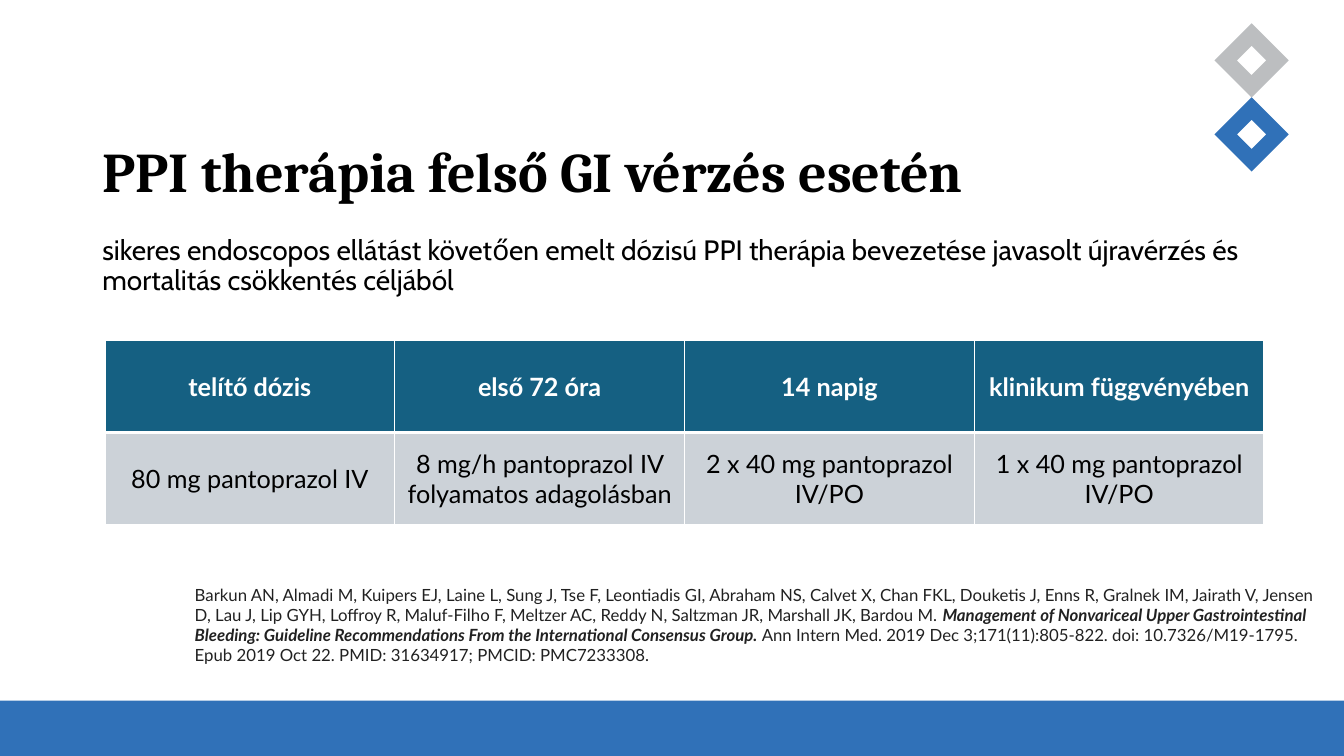
from lxml.etree import SubElement
from pptx import Presentation
from pptx.dml.color import RGBColor
from pptx.enum.shapes import MSO_SHAPE
from pptx.enum.text import MSO_ANCHOR as Anchor, PP_ALIGN as Align
from pptx.oxml.ns import qn
from pptx.util import Inches, Pt

BLUE = RGBColor(0x30, 0x71, 0xB8)
GREY = RGBColor(0xBC, 0xBE, 0xC0)
TEAL = RGBColor(0x15, 0x60, 0x82)
PALE = RGBColor(0xCC, 0xD2, 0xD8)
INK = RGBColor(0x21, 0x21, 0x21)
BLACK = RGBColor(0, 0, 0)
WHITE = RGBColor(255, 255, 255)

COLUMNS, ROWS = 160, 90
MARGIN, CONTENT_WIDTH = 11, 138

STYLES = {
    "title": {"name": "Cambria", "size": Pt(40), "bold": True, "color": BLACK},
    "body": {"name": "Cabin", "size": Pt(20), "color": BLACK},
    "citation": {"name": "Lato", "size": Pt(12), "color": INK},
    "article": {"name": "Lato", "size": Pt(12), "color": INK, "bold": True, "italic": True},
    "header": {"name": "Lato", "size": Pt(18), "bold": True, "color": WHITE},
    "dose": {"name": "Lato", "size": Pt(18), "bold": False, "color": BLACK},
}

DOSING = [
    ("telítő dózis", "80 mg pantoprazol IV"),
    ("első 72 óra", "8 mg/h pantoprazol IV folyamatos adagolásban"),
    ("14 napig", "2 x 40 mg pantoprazol IV/PO"),
    ("klinikum függvényében", "1 x 40 mg pantoprazol IV/PO"),
]

CITATION = [
    ("Barkun AN, Almadi M, Kuipers EJ, Laine L, Sung J, Tse F, Leontiadis GI, Abraham NS, "
     "Calvet X, Chan FKL, Douketis J, Enns R, Gralnek IM, Jairath V, Jensen D, Lau J, "
     "Lip GYH, Loffroy R, Maluf-Filho F, Meltzer AC, Reddy N, Saltzman JR, Marshall JK, "
     "Bardou M. ", "citation"),
    ("Management of Nonvariceal Upper Gastrointestinal Bleeding: Guideline Recommendations "
     "From the International Consensus Group. ", "article"),
    ("Ann Intern Med. 2019 Dec 3;171(11):805-822. doi: 10.7326/M19-1795. "
     "Epub 2019 Oct 22. PMID: 31634917; PMCID: PMC7233308.", "citation"),
]


class SlideBuilder:
    """Places styled elements on one slide by grid columns and rows."""

    def __init__(self, deck):
        self.slide = deck.slides.add_slide(deck.slide_layouts[6])
        self.shapes = self.slide.shapes
        self.column = deck.slide_width / COLUMNS
        self.row = deck.slide_height / ROWS

    def point(self, x, y):
        return round(x * self.column), round(y * self.row)

    def area(self, left, top, width, height):
        return *self.point(left, top), *self.point(width, height)

    def paint(self, shape, color):
        shape.shadow.inherit = False
        shape.fill.solid()
        shape.fill.fore_color.rgb = color
        shape.line.fill.background()

    def band(self, place, color):
        self.paint(self.shapes.add_shape(MSO_SHAPE.RECTANGLE, *self.area(*place)), color)

    def diamond_ring(self, x, y, color, outer=4.42, inner=1.75):
        hole = [(x - inner, y), (x, y - inner), (x + inner, y), (x, y + inner)]
        rim = [(x, y - outer), (x - outer, y), (x, y + outer), (x + outer, y)]
        hole, rim = ([self.point(*corner) for corner in ring] for ring in (hole, rim))
        outline = self.shapes.build_freeform(*hole[0])
        outline.add_line_segments(hole[1:], close=True)
        outline.move_to(*rim[0])
        outline.add_line_segments(rim[1:], close=True)
        self.paint(outline.convert_to_shape(), color)

    def add_passage(self, paragraph, content, style):
        run = paragraph.add_run()
        run.text = content
        for key, value in STYLES[style].items():
            if key == "color":
                run.font.color.rgb = value
            else:
                setattr(run.font, key, value)

    def text(self, place, passages, anchor=Anchor.TOP, spacing=1.0):
        frame = self.shapes.add_textbox(*self.area(*place)).text_frame
        frame.word_wrap = True
        frame.vertical_anchor = anchor
        paragraph = frame.paragraphs[0]
        paragraph.line_spacing = spacing
        for content, style in passages:
            self.add_passage(paragraph, content, style)

    def borders(self, cell, widths):
        properties = cell._tc.get_or_add_tcPr()
        for index, (side, width) in enumerate(widths.items()):
            edge = properties.makeelement(qn(f"a:{side}"), {"w": str(Pt(width))})
            fill = SubElement(edge, qn("a:solidFill"))
            SubElement(fill, qn("a:srgbClr"), val=str(WHITE))
            properties.insert(index, edge)

    def table(self, place, columns):
        depth = len(columns[0])
        grid = self.shapes.add_table(depth, len(columns), *self.area(*place)).table
        for c, entries in enumerate(columns):
            for r, content in enumerate(entries):
                cell = grid.cell(r, c)
                is_header = r == 0
                cell.fill.solid()
                cell.fill.fore_color.rgb = TEAL if is_header else PALE
                cell.vertical_anchor = Anchor.MIDDLE
                paragraph = cell.text_frame.paragraphs[0]
                paragraph.alignment = Align.CENTER
                self.add_passage(paragraph, content, "header" if is_header else "dose")
                self.borders(cell, {"lnL": 1, "lnR": 1, "lnT": 3 if r == 1 else 1,
                                    "lnB": 3 if is_header else 1})


def main():
    deck = Presentation()
    deck.slide_width, deck.slide_height = Inches(13.33), Inches(7.5)
    builder = SlideBuilder(deck)
    builder.band((0, 83.4, COLUMNS, 6.6), BLUE)
    for y, color in ((7.2, GREY), (16, BLUE)):
        builder.diamond_ring(149, y, color)
    builder.text((MARGIN, 13.9, CONTENT_WIDTH, 13.6),
                 [("PPI therápia felső GI vérzés esetén", "title")], Anchor.MIDDLE, 0.9)
    builder.text((MARGIN, 27.5, CONTENT_WIDTH, 47),
                 [("sikeres endoscopos ellátást követően emelt dózisú PPI therápia bevezetése "
                   "javasolt újravérzés és mortalitás csökkentés céljából", "body")], spacing=0.9)
    builder.text((2 * MARGIN, 69, CONTENT_WIDTH, 10.9), CITATION)
    builder.table((12.5, 40.5, CONTENT_WIDTH, 22), DOSING)
    deck.save("out.pptx")


if __name__ == "__main__":
    main()
